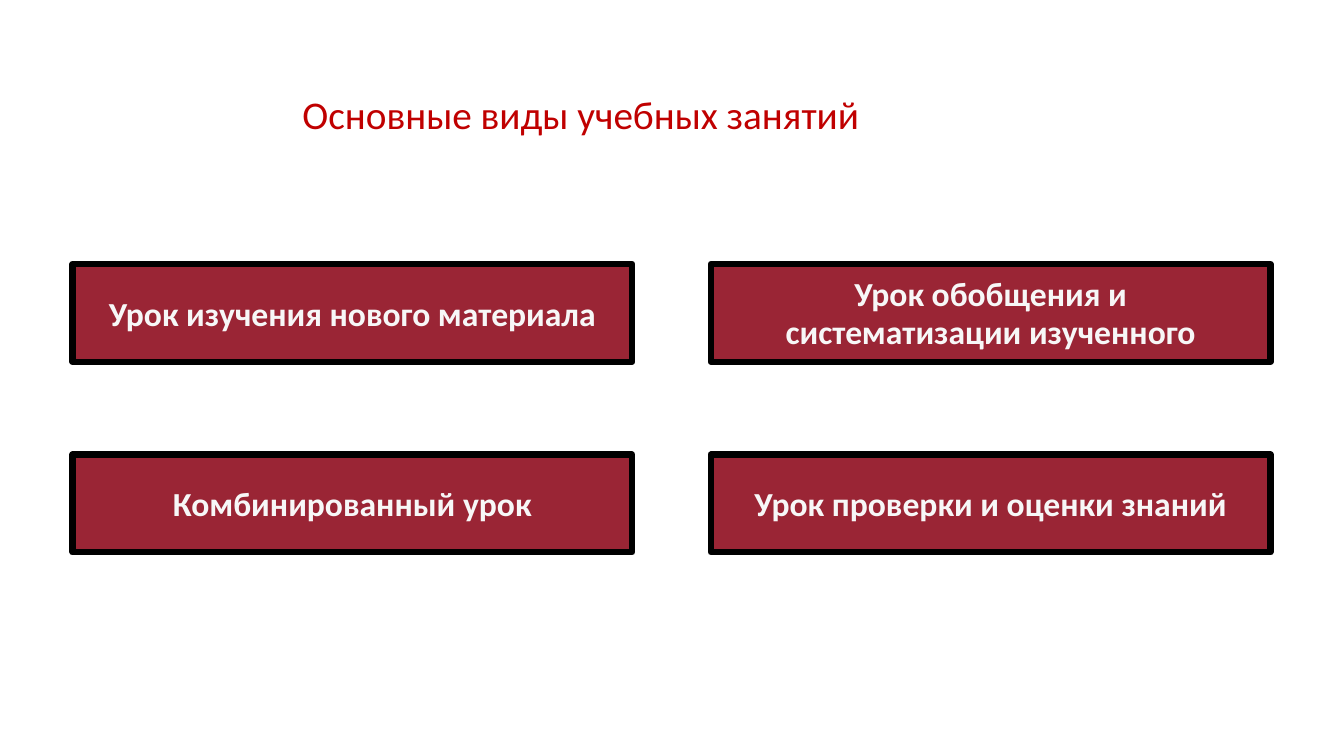
import dataclasses

import pptx
import pptx.dml.color
import pptx.enum.shapes
import pptx.enum.text
import pptx.util

Inches = pptx.util.Inches
Align = pptx.enum.text.PP_ALIGN


@dataclasses.dataclass(frozen=True)
class Theme:
    font: str = "Calibri"
    title_color: str = "C00000"
    box_fill: str = "9A2535"
    box_line: str = "000000"
    box_text: str = "F7F7F7"
    title_size: float = 28
    box_size: float = 24
    box_line_width: float = 4.5
    box_line_spacing: float = 27.6


def color(value):
    return pptx.dml.color.RGBColor.from_string(value)


def write_text(frame, text, *, font, size, text_color, bold=False,
               alignment=Align.LEFT, line_spacing=None, margins=(0, 0, 0, 0)):
    frame.word_wrap = True
    frame.auto_size = pptx.enum.text.MSO_AUTO_SIZE.NONE
    frame.vertical_anchor = pptx.enum.text.MSO_ANCHOR.MIDDLE
    frame.margin_left, frame.margin_top, frame.margin_right, frame.margin_bottom = map(Inches, margins)
    frame.text = text
    for paragraph in frame.paragraphs:
        paragraph.alignment = alignment
        if line_spacing and len(frame.paragraphs) > 1:
            paragraph.line_spacing = pptx.util.Pt(line_spacing)
        paragraph.font.name = font
        paragraph.font.size = pptx.util.Pt(size)
        paragraph.font.bold = bold
        paragraph.font.color.rgb = color(text_color)


class SlideBuilder:
    def __init__(self, slide, theme):
        self.slide = slide
        self.theme = theme

    def title(self, text, left, top, width, height, indent):
        shape = self.slide.shapes.title
        shape.left, shape.top, shape.width, shape.height = map(Inches, (left, top, width, height))
        write_text(shape.text_frame, text, font=self.theme.font, size=self.theme.title_size,
                   text_color=self.theme.title_color, margins=(indent, 0.07, 0, 0))

    def box(self, text, left, top, width, height):
        shape = self.slide.shapes.add_shape(
            pptx.enum.shapes.MSO_SHAPE.RECTANGLE, *map(Inches, (left, top, width, height)))
        shape.shadow.inherit = False
        shape.fill.solid()
        shape.fill.fore_color.rgb = color(self.theme.box_fill)
        shape.line.color.rgb = color(self.theme.box_line)
        shape.line.width = pptx.util.Pt(self.theme.box_line_width)
        write_text(shape.text_frame, text, font=self.theme.font, size=self.theme.box_size,
                   text_color=self.theme.box_text, bold=True, alignment=Align.CENTER,
                   line_spacing=self.theme.box_line_spacing)


def main():
    presentation = pptx.Presentation()
    presentation.slide_width = Inches(13.33)
    presentation.slide_height = Inches(7.5)
    slide = presentation.slides.add_slide(presentation.slide_layouts.get_by_name("Title Only"))
    builder = SlideBuilder(slide, Theme())

    builder.title("Основные виды учебных занятий", 1.67, 0.82, 11.5, 0.55, indent=1.33)

    lesson_columns = (
        ("Урок изучения нового материала", "Комбинированный урок"),
        ("Урок обобщения и\nсистематизации изученного", "Урок проверки и оценки знаний"),
    )
    for column, lessons in enumerate(lesson_columns):
        for row, lesson in enumerate(lessons):
            builder.box(lesson, 0.72 + 6.33 * column, 2.62 + 1.89 * row, 5.55, 0.97)

    presentation.save("out.pptx")


if __name__ == "__main__":
    main()
